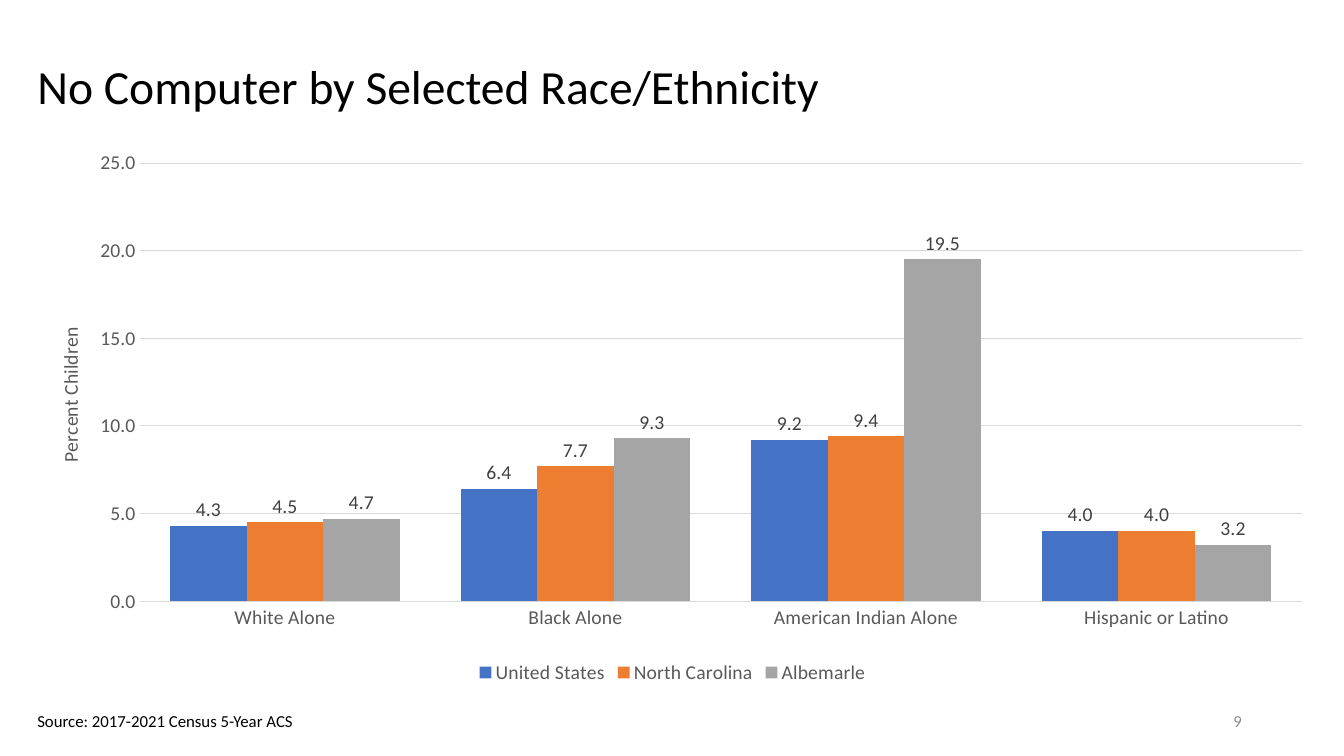
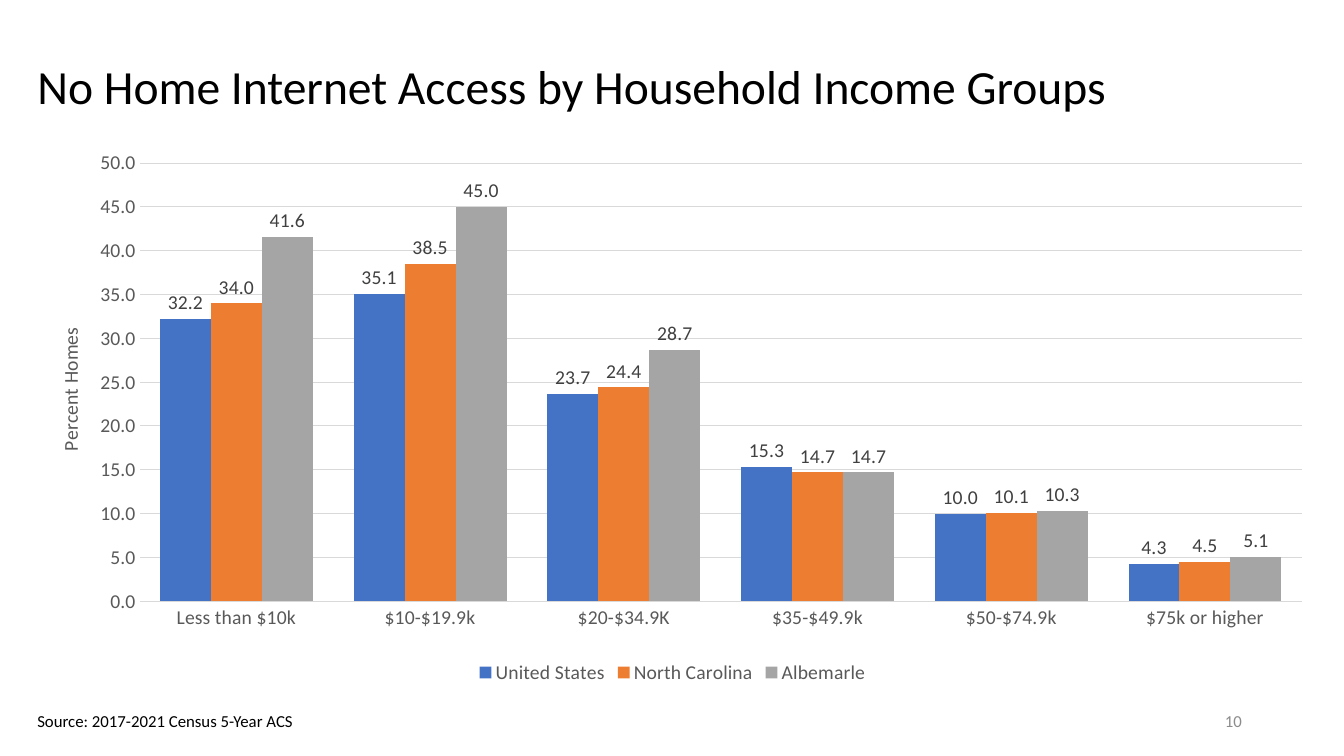
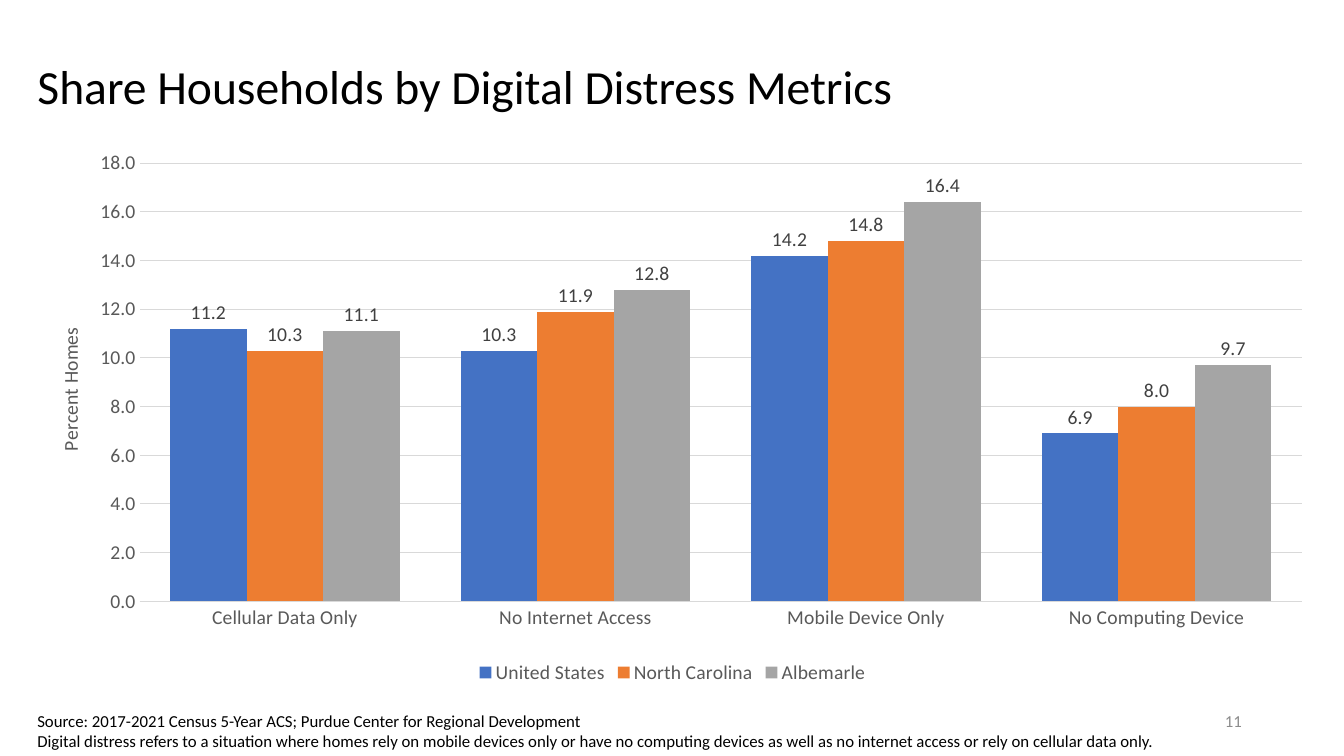
from pptx import Presentation
from pptx.chart.data import CategoryChartData
from pptx.dml.color import RGBColor
from pptx.enum.chart import XL_CHART_TYPE, XL_LABEL_POSITION, XL_LEGEND_POSITION, XL_TICK_MARK
from pptx.enum.text import MSO_ANCHOR, MSO_AUTO_SIZE, PP_ALIGN
from pptx.oxml import parse_xml
from pptx.oxml.ns import nsdecls, qn
from pptx.util import Cm, Pt

FONT = "Calibri"
BLACK, AXIS_GREY, LABEL_GREY = "000000", "595959", "404040"
NUMBER_GREY, RULE_GREY = "8C8C8C", "D9D9D9"
SERIES_COLORS = {"United States": "4472C4", "North Carolina": "ED7D31", "Albemarle": "A5A5A5"}
NUMBER_FORMAT = "#,##0.0"
LEFT = Cm(0.69)
FIRST_NUMBER = 9
SOURCE = "Source: 2017-2021 Census 5-Year ACS"

PAGES = [
    {
        "title": "No Computer by Selected Race/Ethnicity",
        "axis": "Percent Children",
        "scale": (25, 5),
        "categories": ["White Alone", "Black Alone", "American Indian Alone", "Hispanic or Latino"],
        "values": [[4.3, 6.4, 9.2, 4.0], [4.5, 7.7, 9.4, 4.0], [4.7, 9.3, 19.5, 3.2]],
        "source": SOURCE,
        "source_size": (7.06, 0.76),
    },
    {
        "title": "No Home Internet Access by Household Income Groups",
        "axis": "Percent Homes",
        "scale": (50, 5),
        "categories": ["Less than $10k", "$10-$19.9k", "$20-$34.9K",
                       "$35-$49.9k", "$50-$74.9k", "$75k or higher"],
        "values": [[32.2, 35.1, 23.7, 15.3, 10.0, 4.3],
                   [34.0, 38.5, 24.4, 14.7, 10.1, 4.5],
                   [41.6, 45.0, 28.7, 14.7, 10.3, 5.1]],
        "source": SOURCE,
        "source_size": (7.06, 0.76),
    },
    {
        "title": "Share Households by Digital Distress Metrics",
        "axis": "Percent Homes",
        "scale": (18, 2),
        "categories": ["Cellular Data Only", "No Internet Access",
                       "Mobile Device Only", "No Computing Device"],
        "values": [[11.2, 10.3, 14.2, 6.9], [10.3, 11.9, 14.8, 8.0], [11.1, 12.8, 16.4, 9.7]],
        "source": SOURCE + "; Purdue Center for Regional Development\n"
                  "Digital distress refers to a situation where homes rely on mobile devices only or "
                  "have no computing devices as well as no internet access or rely on cellular data only.",
        "source_size": (28.91, 1.27),
    },
]


def write_text(frame, text, size=12, color=BLACK, align=PP_ALIGN.LEFT, spacing=None):
    frame.text = text
    for para in frame.paragraphs:
        para.alignment = align
        para.line_spacing = spacing
        for span in para.runs:
            span.font.name = FONT
            span.font.size = Pt(size)
            span.font.bold = False
            span.font.color.rgb = RGBColor.from_string(color)


def place_chart_part(parent, index, target="", **position):
    for layout in parent.findall(qn("c:layout")):
        parent.remove(layout)
    target_xml = f'<c:layoutTarget val="{target}"/>' if target else ""
    modes = "".join(f'<c:{key}Mode val="edge"/>' for key in "xy")
    places = "".join(f'<c:{key} val="{value}"/>' for key, value in position.items())
    parent.insert(index, parse_xml(
        f'<c:layout {nsdecls("c")}><c:manualLayout>{target_xml}{modes}{places}'
        "</c:manualLayout></c:layout>"))


deck = Presentation()
deck.slide_width, deck.slide_height = Cm(33.87), Cm(19.05)
title_only = deck.slide_layouts[5]

for number, content in enumerate(PAGES, FIRST_NUMBER):
    page = deck.slides.add_slide(title_only)

    title = page.shapes.title
    title.left, title.top, title.width, title.height = LEFT, Cm(0.86), Cm(32.41), Cm(2.77)
    title.text_frame.auto_size = MSO_AUTO_SIZE.NONE
    title.text_frame.vertical_anchor = MSO_ANCHOR.MIDDLE
    write_text(title.text_frame, content["title"], size=34, spacing=0.9)

    number_box = page.shapes.add_textbox(Cm(23.93), Cm(17.65), Cm(7.62), Cm(1.02))
    number_box.text_frame.word_wrap = True
    number_box.text_frame.vertical_anchor = MSO_ANCHOR.MIDDLE
    write_text(number_box.text_frame, str(number), color=NUMBER_GREY, align=PP_ALIGN.RIGHT)

    width, height = content["source_size"]
    source_box = page.shapes.add_textbox(LEFT, Cm(17.78), Cm(width), Cm(height))
    source_box.text_frame.word_wrap = False
    source_box.text_frame.auto_size = MSO_AUTO_SIZE.SHAPE_TO_FIT_TEXT
    write_text(source_box.text_frame, content["source"])

    data = CategoryChartData(number_format=NUMBER_FORMAT)
    data.categories = content["categories"]
    for name, values in zip(SERIES_COLORS, content["values"]):
        data.add_series(name, values)
    chart = page.shapes.add_chart(
        XL_CHART_TYPE.COLUMN_CLUSTERED, LEFT, Cm(3.63), Cm(32.51), Cm(13.72), data).chart
    chart.has_title = False
    chart.font.name = FONT
    chart.font.size = Pt(14)
    chart.font.color.rgb = RGBColor.from_string(AXIS_GREY)
    chart.has_legend = True
    chart.legend.position = XL_LEGEND_POSITION.BOTTOM
    chart.legend.include_in_layout = False

    for axis in (chart.category_axis, chart.value_axis):
        axis.major_tick_mark = axis.minor_tick_mark = XL_TICK_MARK.NONE
    category_line = chart.category_axis.format.line
    value_axis = chart.value_axis
    grid_line = value_axis.major_gridlines.format.line
    for line in (category_line, grid_line):
        line.color.rgb = RGBColor.from_string(RULE_GREY)
        line.width = Pt(0.75)
    value_axis.format.line.fill.background()
    value_axis.minimum_scale = 0
    value_axis.maximum_scale, value_axis.major_unit = content["scale"]
    value_axis.tick_labels.number_format = NUMBER_FORMAT
    value_axis.tick_labels.number_format_is_linked = False
    axis_title = value_axis.axis_title
    write_text(axis_title.text_frame, content["axis"], size=14, color=AXIS_GREY, align=PP_ALIGN.CENTER)
    place_chart_part(axis_title._element, 1, x=0.02, y=0.33)

    plot = chart.plots[0]
    plot.gap_width = 80
    plot.vary_by_categories = False
    plot.has_data_labels = True
    labels = plot.data_labels
    labels.show_value = True
    labels.position = XL_LABEL_POSITION.OUTSIDE_END
    labels.number_format = NUMBER_FORMAT
    labels.number_format_is_linked = False
    labels.font.name = FONT
    labels.font.size = Pt(14)
    labels.font.color.rgb = RGBColor.from_string(LABEL_GREY)
    for series, color in zip(plot.series, SERIES_COLORS.values()):
        series.format.fill.solid()
        series.format.fill.fore_color.rgb = RGBColor.from_string(color)
    plot_area = chart._chartSpace.chart.plotArea
    place_chart_part(plot_area, 0, target="inner", x=0.087, y=0.035, w=0.901, h=0.805)

deck.save("out.pptx")
